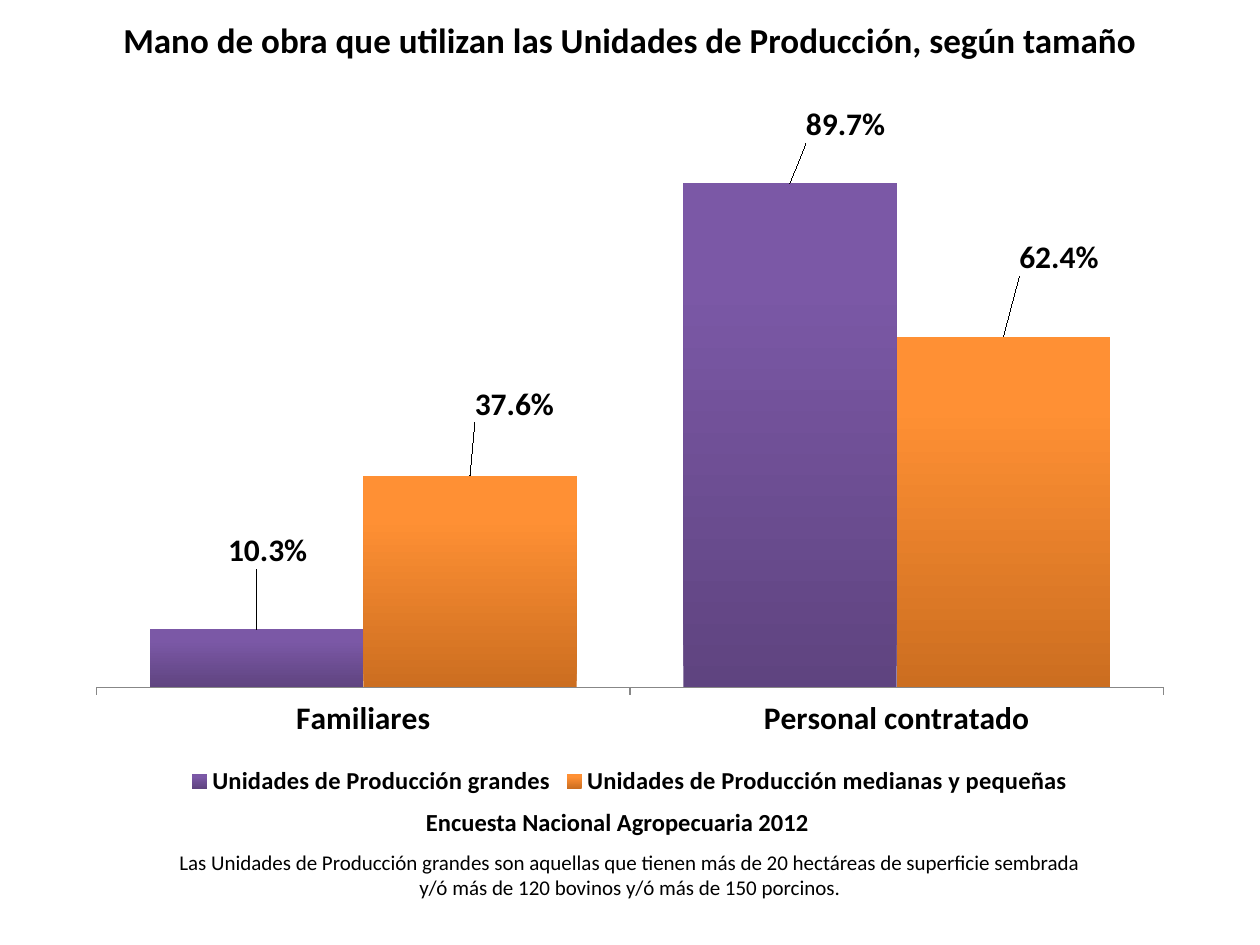
"""Builds the farm labour slide: a titled column chart with source and note."""
from dataclasses import dataclass

from lxml.etree import SubElement
from pptx import Presentation
from pptx.chart.data import CategoryChartData
from pptx.dml.color import RGBColor
from pptx.enum.chart import XL_CHART_TYPE, XL_LABEL_POSITION, XL_LEGEND_POSITION, XL_TICK_LABEL_POSITION, XL_TICK_MARK
from pptx.enum.shapes import MSO_SHAPE
from pptx.enum.text import PP_ALIGN
from pptx.oxml import parse_xml
from pptx.oxml.ns import nsdecls, qn
from pptx.util import Inches, Pt


@dataclass(frozen=True)
class Theme:
    face: str = "Calibri"
    ink: str = "000000"
    paper: str = "FFFFFF"
    axis: str = "878787"
    title: int = 20
    label: int = 18
    key: int = 14
    note: int = 12


@dataclass(frozen=True)
class Box:
    x: float
    y: float
    w: float
    h: float


@dataclass(frozen=True)
class Text:
    box: Box
    words: str
    size: int
    bold: bool = True
    wrap: bool = True
    solid: bool = False


@dataclass(frozen=True)
class Group:
    name: str
    vals: tuple
    stops: tuple
    shifts: tuple


THEME = Theme()
WIDE, HIGH = Inches(10), Inches(7.5)
FORM = "0.0%"
CATS = ("Familiares", "Personal contratado")
FRAME = Box(0.059, 0.112, 0.882, 0.736)
PLOT = Box(0.02, 0.02, 0.96, 0.815)
GROUPS = (
    Group("Unidades de Producción grandes", (0.103, 0.897),
          ((0, "5F4480"), (80, "7B58A6"), (100, "7C57A8")),
          ((0.01, -0.08), (0.05, -0.05))),
    Group("Unidades de Producción medianas y pequeñas", (0.376, 0.624),
          ((0, "CC6E20"), (80, "FF9034"), (100, "FF9136")),
          ((0.04, -0.07), (0.05, -0.08))),
)
TEXTS = (
    Text(Box(0, 0.013, 1, 0.059),
         "Mano de obra que utilizan las Unidades de Producción, según tamaño", THEME.title),
    Text(Box(0.128, 0.892, 0.744, 0.067),
         "Las Unidades de Producción grandes son aquellas que tienen más de 20 hectáreas de "
         "superficie sembrada y/ó más de 120 bovinos y/ó más de 150 porcinos.",
         THEME.note, bold=False, solid=True),
    Text(Box(0.327, 0.847, 0.326, 0.045), "Encuesta Nacional Agropecuaria 2012",
         THEME.key, wrap=False),
)


def apply(item, form: dict) -> None:
    for name, value in form.items():
        setattr(item, name, value)


def style(font, size: int, bold: bool = True) -> None:
    apply(font, {"name": THEME.face, "size": Pt(size), "bold": bold})
    font.color.rgb = RGBColor.from_string(THEME.ink)


def place(box: Box) -> tuple:
    return tuple(int(n) for n in (box.x * WIDE, box.y * HIGH, box.w * WIDE, box.h * HIGH))


def write(slide, text: Text) -> None:
    if text.solid:
        shape = slide.shapes.add_shape(MSO_SHAPE.RECTANGLE, *place(text.box))
        shape.shadow.inherit = False
        shape.fill.solid()
        shape.fill.fore_color.rgb = RGBColor.from_string(THEME.paper)
        shape.line.fill.background()
    else:
        shape = slide.shapes.add_textbox(*place(text.box))
    shape.text_frame.word_wrap = text.wrap
    para = shape.text_frame.paragraphs[0]
    apply(para, {"text": text.words, "alignment": PP_ALIGN.CENTER})
    style(para.runs[0].font, text.size, text.bold)


def layout(parts: dict):
    root = parse_xml(f"<c:layout {nsdecls('c')}/>")
    hand = SubElement(root, qn("c:manualLayout"))
    for name, value in parts.items():
        SubElement(hand, qn(f"c:{name}")).set("val", str(value))
    return root


def shade(series, stops: tuple) -> None:
    marks = "".join(f'<a:gs pos="{pos * 1000}"><a:srgbClr val="{tone}"/></a:gs>'
                    for pos, tone in stops)
    series.format.fill.solid()
    old = series.format.fill._xPr.find(qn("a:solidFill"))
    old.getparent().replace(old, parse_xml(
        f"<a:gradFill {nsdecls('a')}><a:gsLst>{marks}</a:gsLst>"
        '<a:lin ang="16200000" scaled="0"/></a:gradFill>'))


def label(series, shifts: tuple) -> None:
    tags = series.data_labels
    apply(tags, {"show_value": True, "number_format": FORM, "number_format_is_linked": False,
                 "position": XL_LABEL_POSITION.OUTSIDE_END})
    style(tags.font, THEME.label)
    for spot in range(len(shifts)):
        tag = series.points[spot].data_label
        style(tag.font, THEME.label)
        tag.position = XL_LABEL_POSITION.OUTSIDE_END
    for node, (x, y) in zip(series._element.iter(qn("c:dLbl")), shifts):
        node.insert(1, layout({"x": x, "y": y}))
        node.insert(2, parse_xml(
            f'<c:numFmt {nsdecls("c")} formatCode="{FORM}" sourceLinked="0"/>'))


def draw(slide) -> None:
    data = CategoryChartData(number_format=FORM)
    data.categories = CATS
    for group in GROUPS:
        data.add_series(group.name, group.vals)
    chart = slide.shapes.add_chart(XL_CHART_TYPE.COLUMN_CLUSTERED, *place(FRAME), data).chart
    apply(chart, {"has_title": False, "has_legend": True})
    style(chart.font, 10, False)
    apply(chart.legend, {"position": XL_LEGEND_POSITION.BOTTOM, "include_in_layout": False})
    style(chart.legend.font, THEME.key)
    apply(chart.value_axis, {"visible": False, "has_major_gridlines": False,
                             "minimum_scale": 0, "maximum_scale": 1})
    base = chart.category_axis
    apply(base, {"major_tick_mark": XL_TICK_MARK.OUTSIDE,
                 "tick_label_position": XL_TICK_LABEL_POSITION.LOW})
    style(base.tick_labels.font, THEME.label)
    base.format.line.color.rgb = RGBColor.from_string(THEME.axis)
    plot = chart.plots[0]
    apply(plot, {"gap_width": 50, "overlap": 0, "vary_by_categories": False})
    for series, group in zip(plot.series, GROUPS):
        shade(series, group.stops)
        label(series, group.shifts)
    area = chart._chartSpace.find(".//" + qn("c:plotArea"))
    for old in area.findall(qn("c:layout")):
        area.remove(old)
    area.insert(0, layout({"layoutTarget": "inner", "xMode": "edge", "yMode": "edge",
                           "x": PLOT.x, "y": PLOT.y, "w": PLOT.w, "h": PLOT.h}))


def main() -> None:
    deck = Presentation()
    apply(deck, {"slide_width": WIDE, "slide_height": HIGH})
    slide = deck.slides.add_slide(deck.slide_layouts[6])
    draw(slide)
    for text in TEXTS:
        write(slide, text)
    deck.save("out.pptx")


if __name__ == "__main__":
    main()
